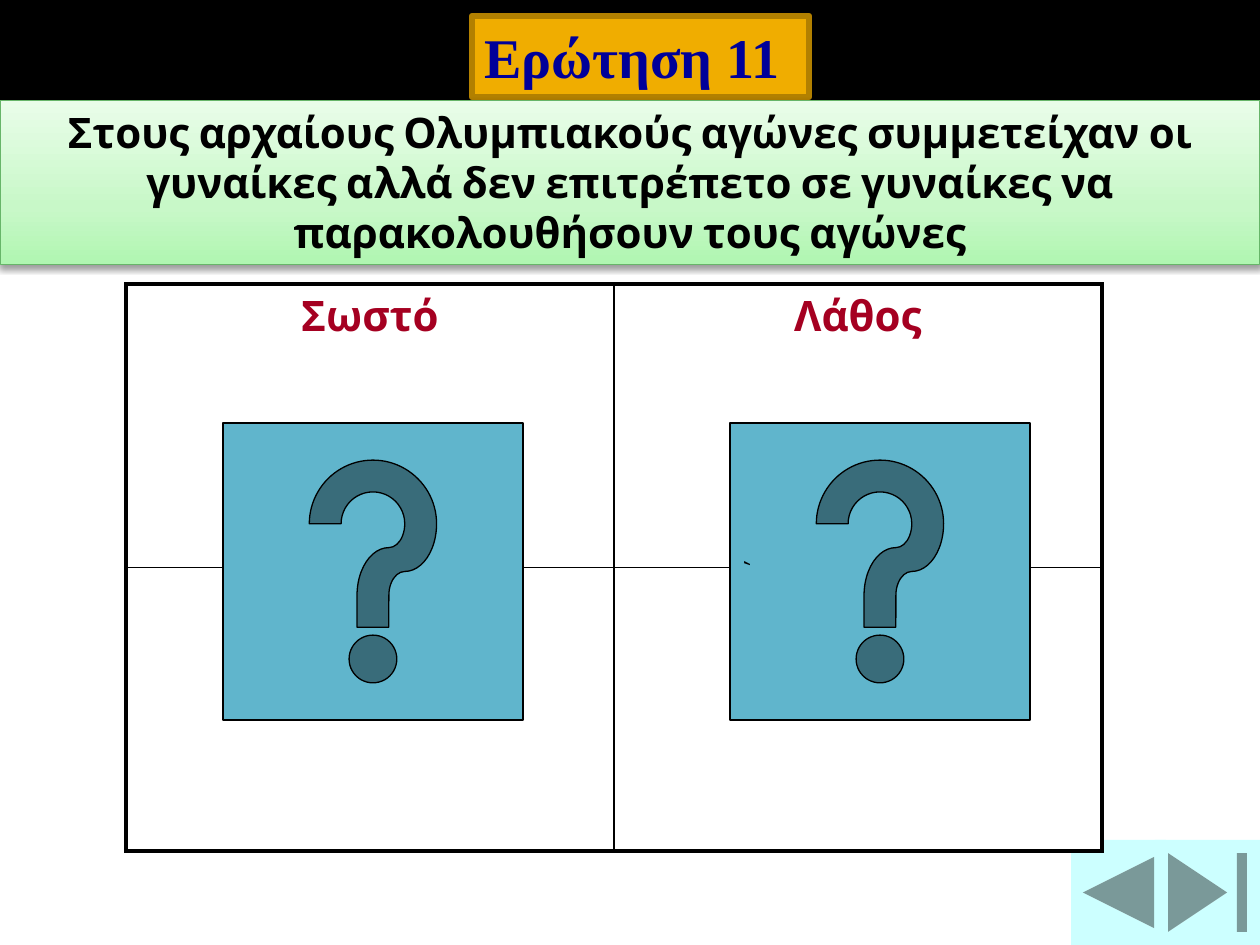
from dataclasses import dataclass
from typing import Optional

from lxml.etree import SubElement
from pptx import Presentation
from pptx.dml.color import RGBColor
from pptx.enum.shapes import MSO_SHAPE
from pptx.enum.text import MSO_ANCHOR, PP_ALIGN
from pptx.oxml.ns import qn
from pptx.util import Emu, Pt

EMU_PER_PX = 914400 / 126

BLACK = RGBColor(0x00, 0x00, 0x00)
WHITE = RGBColor(0xFF, 0xFF, 0xFF)
AMBER = RGBColor(0xF0, 0xAD, 0x00)
DARK_AMBER = RGBColor(0xB2, 0x80, 0x00)
NAVY = RGBColor(0x00, 0x00, 0x99)
PALE_CYAN = RGBColor(0xCC, 0xFF, 0xFF)
TEAL = RGBColor(0x60, 0xB5, 0xCC)
GREEN = RGBColor(0x67, 0xB5, 0x69)
CRIMSON = RGBColor(0xA5, 0x00, 0x21)
BANNER_STOPS = [
    (0, RGBColor(0xB0, 0xF6, 0xB1)),
    (35, RGBColor(0xC8, 0xF8, 0xC8)),
    (100, RGBColor(0xE9, 0xFD, 0xE9)),
]
OUTER_BORDER, INNER_BORDER = 2.25, 1


@dataclass
class Label:
    text: str
    font: str
    size: int
    color: RGBColor
    bold: bool = True
    align: PP_ALIGN = PP_ALIGN.LEFT
    anchor: MSO_ANCHOR = MSO_ANCHOR.TOP
    wrap: bool = True


@dataclass
class Box:
    kind: MSO_SHAPE
    left: int
    top: int
    width: int
    height: int
    fill: Optional[RGBColor] = None
    line: Optional[RGBColor] = None
    line_width: float = 0
    label: Optional[Label] = None


def px(length: int) -> Emu:
    return Emu(round(length * EMU_PER_PX))


def write_label(frame, label: Label) -> None:
    para = frame.paragraphs[0]
    para.alignment = label.align
    span = para.add_run()
    span.text = label.text
    font_format = {"name": label.font, "size": Pt(label.size), "bold": label.bold}
    for name, value in font_format.items():
        setattr(span.font, name, value)
    span.font.color.rgb = label.color


def draw_box(page, box: Box):
    shape = page.shapes.add_shape(
        box.kind, px(box.left), px(box.top), px(box.width), px(box.height)
    )
    shape.shadow.inherit = False
    if box.fill is not None:
        shape.fill.solid()
        shape.fill.fore_color.rgb = box.fill
    if box.line is None:
        shape.line.fill.background()
    else:
        shape.line.color.rgb = box.line
        shape.line.width = Pt(box.line_width)
    if box.label:
        frame_format = {
            "word_wrap": box.label.wrap,
            "vertical_anchor": box.label.anchor,
        }
        for name, value in frame_format.items():
            setattr(shape.text_frame, name, value)
        write_label(shape.text_frame, box.label)
    return shape


def add_color(parent, color: RGBColor):
    return SubElement(parent, qn("a:srgbClr"), val=str(color))


def shade_banner(shape) -> None:
    # Three-stop gradient running from bottom to top
    shape.fill.gradient()
    shape.fill.gradient_angle = 90
    stops = shape._element.spPr.find(qn("a:gradFill")).find(qn("a:gsLst"))
    for stop in list(stops):
        stops.remove(stop)
    for position, color in BANNER_STOPS:
        add_color(SubElement(stops, qn("a:gs"), pos=str(position * 1000)), color)
    # Soft shadow below
    effects = shape._element.spPr.find(qn("a:effectLst"))
    shadow = SubElement(
        effects, qn("a:outerShdw"), blurRad=str(Pt(3.5)), dist=str(Pt(2)),
        dir="5400000", rotWithShape="0",
    )
    SubElement(add_color(shadow, BLACK), qn("a:alpha"), val="38000")


def set_borders(cell, widths: dict[str, float]) -> None:
    properties = cell._tc.get_or_add_tcPr()
    for position, (side, width) in enumerate(widths.items()):
        border = properties.makeelement(qn(f"a:ln{side}"), {"w": str(Pt(width))})
        add_color(SubElement(border, qn("a:solidFill")), BLACK)
        properties.insert(position, border)


def draw_answers(page, headings: list[Label]) -> None:
    table = page.shapes.add_table(2, 2, px(126), px(284), px(976), px(567)).table
    for name in ("first_row", "horz_banding"):
        setattr(table, name, False)
    for row in range(2):
        for column in range(2):
            cell = table.cell(row, column)
            cell.fill.solid()
            cell.fill.fore_color.rgb = WHITE
            outer = {"L": column == 0, "R": column == 1, "T": row == 0, "B": row == 1}
            set_borders(cell, {
                side: OUTER_BORDER if edge else INNER_BORDER
                for side, edge in outer.items()
            })
            if row == 0:
                write_label(cell.text_frame, headings[column])


def main() -> None:
    deck = Presentation()
    deck.slide_width, deck.slide_height = px(1260), px(945)
    page = deck.slides.add_slide(deck.slide_layouts[6])

    # Header bar, title and navigation buttons
    title = Label("Ερώτηση 11", "Times New Roman", 32, NAVY)
    for box in (
        Box(MSO_SHAPE.RECTANGLE, 0, 0, 1260, 198, BLACK),
        Box(MSO_SHAPE.RECTANGLE, 472, 16, 337, 81, AMBER, DARK_AMBER, 3.78, title),
        Box(MSO_SHAPE.ACTION_BUTTON_END, 1155, 840, 105, 105, PALE_CYAN),
        Box(MSO_SHAPE.ACTION_BUTTON_BACK_OR_PREVIOUS, 1071, 840, 95, 105, PALE_CYAN),
    ):
        draw_box(page, box)

    # Question banner
    question = Label(
        "Στους αρχαίους Ολυμπιακούς αγώνες συμμετείχαν οι γυναίκες αλλά δεν "
        "επιτρέπετο σε γυναίκες να παρακολουθήσουν τους αγώνες",
        "Cabin", 24, BLACK, align=PP_ALIGN.CENTER,
    )
    banner = Box(
        MSO_SHAPE.RECTANGLE, 0, 100, 1260, 165,
        line=GREEN, line_width=0.5, label=question,
    )
    shade_banner(draw_box(page, banner))

    # Answer table
    draw_answers(page, [
        Label(text, "Montserrat", 24, CRIMSON, align=PP_ALIGN.CENTER)
        for text in ("Σωστό", "Λάθος")
    ])

    # Question-mark buttons over the answers
    tick = Label("`", "Cabin", 18, BLACK, False, anchor=MSO_ANCHOR.MIDDLE, wrap=False)
    for left, label in ((730, tick), (223, None)):
        draw_box(page, Box(
            MSO_SHAPE.ACTION_BUTTON_HELP, left, 423, 300, 297, TEAL, BLACK, 0.75, label
        ))

    deck.save("out.pptx")


if __name__ == "__main__":
    main()
